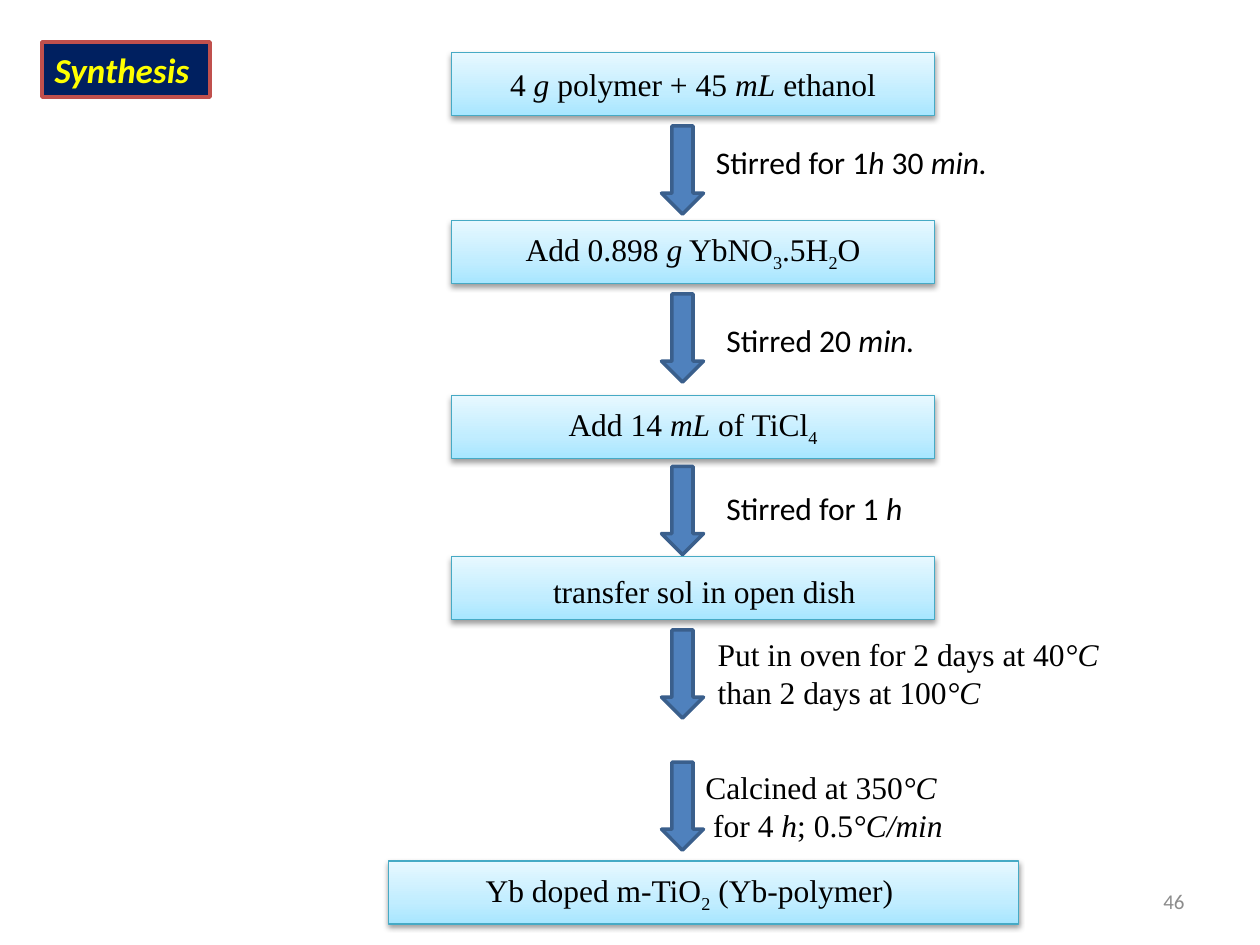
"""Build the synthesis flow chart slide."""
from copy import deepcopy
from dataclasses import dataclass

from lxml import etree
from pptx import Presentation
from pptx import util as u
from pptx.dml.color import RGBColor
from pptx.enum import shapes, text
from pptx.oxml import ns


@dataclass(frozen=True)
class Theme:
    """Colours, fonts and type sizes of the slide."""
    black: str = "000000"
    grey: str = "8C8C8C"
    yellow: str = "FFFF00"
    navy: str = "002060"
    red: str = "C0504D"
    blue: str = "4F81BD"
    dark_blue: str = "3A5F8C"
    teal: str = "46AAC5"
    gradient: tuple = ((0, "A7E6FF"), (0.35, "C1EDFF"), (1, "E7F8FF"))
    sans: str = "Calibri"
    serif: str = "Times New Roman"
    title_size: int = 20
    body_size: int = 18
    number_size: int = 12


THEME = Theme()
BOX_HEIGHT = 36
ARROW_LEFT, ARROW_WIDTH, ARROW_HEIGHT = 378, 24, 50.4


def points(*lengths):
    """Convert lengths in points to slide units."""
    return [u.Pt(length) for length in lengths]


def rgb(colour):
    """Turn a hex string into a colour."""
    return RGBColor.from_string(colour)


def set_line(shape, colour, width):
    """Give a shape a solid outline."""
    shape.line.color.rgb = rgb(colour)
    shape.line.width = u.Pt(width)


def set_solid(shape, fill, line):
    """Give a shape a flat fill and a two-point outline without shadow."""
    shape.shadow.inherit = False
    shape.fill.solid()
    shape.fill.fore_color.rgb = rgb(fill)
    set_line(shape, line, 2)


def set_font(paragraph, name, size, colour):
    """Set the font shared by all runs of a paragraph."""
    paragraph.font.name = name
    paragraph.font.size = u.Pt(size)
    paragraph.font.color.rgb = rgb(colour)


def write(paragraph, marked, font=THEME.serif):
    """Write runs split by |, where * starts an italic and _ a subscript run."""
    set_font(paragraph, font, THEME.body_size, THEME.black)
    for piece in marked.split("|"):
        run = paragraph.add_run()
        run.text = piece.lstrip("*_")
        if piece.startswith("*"):
            run.font.italic = True
        elif piece.startswith("_"):
            run._r.get_or_add_rPr().set("baseline", "-25000")


def add_shadow(shape):
    """Add a soft shadow below a shape."""
    shape.shadow.inherit = False
    effects = shape._element.spPr.find(ns.qn("a:effectLst"))
    shadow = etree.SubElement(effects, ns.qn("a:outerShdw"), blurRad=str(u.Pt(3.1)),
                              dist=str(u.Pt(1.6)), dir="5400000", rotWithShape="0")
    colour = etree.SubElement(shadow, ns.qn("a:srgbClr"), val=THEME.black)
    etree.SubElement(colour, ns.qn("a:alpha"), val="38000")


def set_gradient(shape):
    """Fill a shape with the three-stop gradient, lightest at the top."""
    shape.fill.gradient()
    shape.fill.gradient_angle = 90
    stop_list = next(shape._element.spPr.iter(ns.qn("a:gsLst")))
    stop_list.append(deepcopy(stop_list[-1]))
    for stop, (position, colour) in zip(shape.fill.gradient_stops, THEME.gradient):
        stop.position = position
        stop.color.rgb = rgb(colour)


def add_step(slide, top, marked, left=258, width=276,
             align=text.PP_ALIGN.CENTER, inset_left=7.2, inset_top=3.6):
    """Add one step box of the flow."""
    shape = slide.shapes.add_shape(shapes.MSO_SHAPE.RECTANGLE,
                                   *points(left, top, width, BOX_HEIGHT))
    set_gradient(shape)
    set_line(shape, THEME.teal, 0.75)
    add_shadow(shape)
    frame = shape.text_frame
    frame.vertical_anchor = text.MSO_ANCHOR.MIDDLE
    frame.margin_left, frame.margin_top = points(inset_left, inset_top)
    frame.paragraphs[0].alignment = align
    write(frame.paragraphs[0], marked)


def add_arrow(slide, top):
    """Add a down arrow between two steps."""
    shape = slide.shapes.add_shape(shapes.MSO_SHAPE.DOWN_ARROW,
                                   *points(ARROW_LEFT, top, ARROW_WIDTH, ARROW_HEIGHT))
    set_solid(shape, THEME.blue, THEME.dark_blue)


def add_label(slide, left, top, width, lines, font=THEME.serif, last_indent=0):
    """Add the condition beside an arrow, one paragraph a line."""
    height = 7.2 + 21.8 * len(lines)
    frame = slide.shapes.add_textbox(*points(left, top, width, height)).text_frame
    frame.word_wrap = False
    for index, line in enumerate(lines):
        paragraph = frame.add_paragraph() if index else frame.paragraphs[0]
        write(paragraph, line, font)
    if last_indent:
        paragraph._p.get_or_add_pPr().set("marL", str(u.Pt(last_indent)))


def add_title(slide, wording):
    """Format the title placeholder as a framed heading."""
    title = slide.shapes.title
    title.left, title.top, title.width, title.height = points(24, 24, 96, 31.5)
    set_solid(title, THEME.navy, THEME.red)
    frame = title.text_frame
    frame.text = wording
    frame.auto_size = text.MSO_AUTO_SIZE.NONE
    frame.vertical_anchor = text.MSO_ANCHOR.MIDDLE
    paragraph = frame.paragraphs[0]
    paragraph.alignment = text.PP_ALIGN.LEFT
    set_font(paragraph, THEME.sans, THEME.title_size, THEME.yellow)
    paragraph.font.bold = paragraph.font.italic = True


def add_page_number(slide, number):
    """Add the page number at the lower right."""
    frame = slide.shapes.add_textbox(*points(516, 500.5, 168, 28.75)).text_frame
    frame.word_wrap = True
    frame.vertical_anchor = text.MSO_ANCHOR.MIDDLE
    paragraph = frame.paragraphs[0]
    paragraph.text = number
    paragraph.alignment = text.PP_ALIGN.RIGHT
    set_font(paragraph, THEME.sans, THEME.number_size, THEME.grey)


def main():
    """Build and save the slide."""
    presentation = Presentation()
    presentation.slide_width, presentation.slide_height = points(720, 540)
    slide = presentation.slides.add_slide(presentation.slide_layouts[5])
    add_title(slide, "Synthesis")

    add_step(slide, 30, "4 |*g| polymer + 45 |*mL| ethanol")
    add_step(slide, 126, "Add 0.898 |*g| YbNO|_3|.5H|_2|O")
    add_step(slide, 226, "Add 14 |*mL| of TiCl|_4")
    add_step(slide, 318, "transfer sol in open dish", inset_left=20, inset_top=7.2)
    add_step(slide, 492, "Yb doped m-TiO|_2| (Yb-polymer)", left=222, width=360,
             align=text.PP_ALIGN.LEFT, inset_left=55.5)

    for top in (72, 168, 266.5, 360, 435.5):
        add_arrow(slide, top)

    add_label(slide, 402, 78, 171, ["Stirred for 1|*h| 30 |*min."], THEME.sans)
    add_label(slide, 408, 180, 123, ["Stirred 20 |*min."], THEME.sans)
    add_label(slide, 408, 276, 117, ["Stirred for 1 |*h"], THEME.sans)
    add_label(slide, 403, 359.5, 239,
              ["Put in oven for 2 days at 40|*°C", "than 2 days at 100|*°C"])
    add_label(slide, 396, 435.5, 158,
              ["Calcined at 350|*°C", "for 4 |*h|; 0.5|*°C/min"], last_indent=4.5)
    add_page_number(slide, "46")
    presentation.save("out.pptx")


if __name__ == "__main__":
    main()
